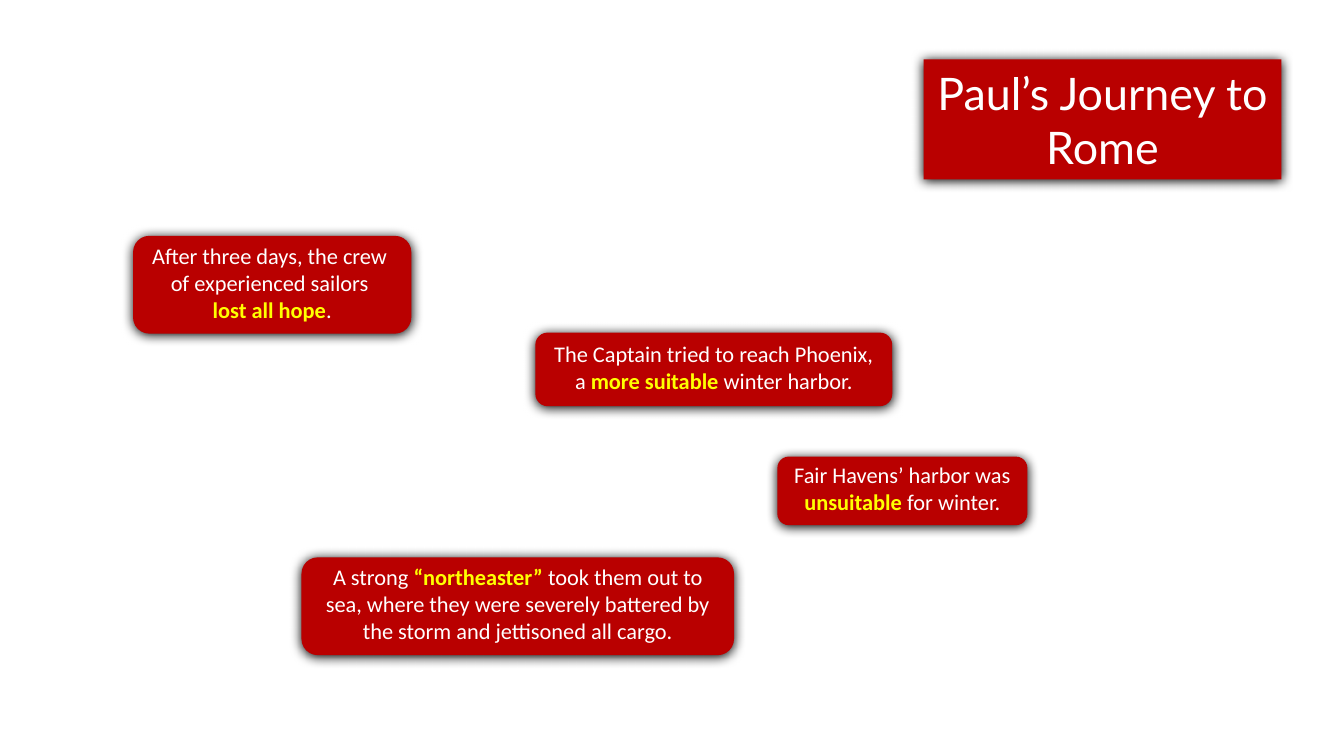
from dataclasses import dataclass

from lxml.etree import SubElement
from pptx import Presentation
from pptx.dml.color import RGBColor
from pptx.enum.shapes import MSO_SHAPE
from pptx.enum.text import MSO_ANCHOR, MSO_AUTO_SIZE, PP_ALIGN
from pptx.oxml import parse_xml
from pptx.oxml.ns import nsdecls, qn
from pptx.shapes.autoshape import Shape
from pptx.slide import Slide
from pptx.text.text import _Paragraph as Paragraph
from pptx.util import Emu, Pt

EMU_PER_PX = 9144  # 100 px to the inch
TITLE_ONLY_LAYOUT = 5


@dataclass(frozen=True)
class Theme:
    panel: RGBColor = RGBColor(0xB9, 0x00, 0x00)
    text: RGBColor = RGBColor(0xFF, 0xFF, 0xFF)
    emphasis: RGBColor = RGBColor(0xFF, 0xFF, 0x00)
    shadow: str = "000000"
    shadow_blur: Pt = Pt(8.5)
    shadow_distance: Pt = Pt(1)
    title_font: str = "Lato"
    title_size: Pt = Pt(32)
    note_font: str = "Calibri"
    note_size: Pt = Pt(16)


@dataclass(frozen=True)
class Box:
    left: int
    top: int
    width: int
    height: int


@dataclass(frozen=True)
class Note:
    """A journey note whose middle words are emphasised."""
    box: Box
    before: str
    emphasised: str
    after: str


THEME = Theme()
TITLE_BOX = Box(916, 59, 355, 119)
NOTES = (
    Note(Box(132, 234, 276, 97),
         "After three days, the crew \nof experienced sailors \n", "lost all hope", "."),
    Note(Box(531, 330, 354, 73),
         "The Captain tried to reach Phoenix, a ", "more suitable", " winter harbor."),
    Note(Box(299, 553, 429, 97), "A strong ", "“northeaster”",
         " took them out to sea, where they were severely battered by the storm"
         " and jettisoned all cargo."),
    Note(Box(771, 453, 248, 68),
         "Fair Havens’ harbor was ", "unsuitable", " for winter."),
)


def px(length: int) -> Emu:
    return Emu(length * EMU_PER_PX)


def style_panel(shape: Shape) -> None:
    """Give a shape the red fill, soft shadow and centred text of a panel."""
    shape.fill.solid()
    shape.fill.fore_color.rgb = THEME.panel
    shape.line.fill.background()
    shape.shadow.inherit = False
    effects = shape.element.spPr.find(qn("a:effectLst"))
    shadow = SubElement(effects, qn("a:outerShdw"), blurRad=str(THEME.shadow_blur),
                        dist=str(THEME.shadow_distance), dir="5400000",
                        algn="ctr", rotWithShape="0")
    SubElement(shadow, qn("a:srgbClr"), val=THEME.shadow)
    frame = shape.text_frame
    frame.word_wrap = True
    frame.auto_size = MSO_AUTO_SIZE.NONE
    frame.vertical_anchor = MSO_ANCHOR.MIDDLE
    frame.paragraphs[0].alignment = PP_ALIGN.CENTER


def add_run(paragraph: Paragraph, text: str, font: str, size: Pt,
            emphasised: bool = False) -> None:
    run = paragraph.add_run()
    run.text = text
    run.font.name = font
    run.font.size = size
    run.font.bold = emphasised
    run.font.color.rgb = THEME.emphasis if emphasised else THEME.text


def add_title(slide: Slide) -> None:
    title = slide.shapes.title
    title.left, title.top = px(TITLE_BOX.left), px(TITLE_BOX.top)
    title.width, title.height = px(TITLE_BOX.width), px(TITLE_BOX.height)
    title.element.spPr.insert(1, parse_xml(
        f'<a:prstGeom {nsdecls("a")} prst="roundRect"><a:avLst/></a:prstGeom>'))
    style_panel(title)
    add_run(title.text_frame.paragraphs[0], "Paul’s Journey to Rome",
            THEME.title_font, THEME.title_size)


def add_note(slide: Slide, note: Note) -> None:
    box = note.box
    shape = slide.shapes.add_shape(MSO_SHAPE.ROUNDED_RECTANGLE, px(box.left),
                                   px(box.top), px(box.width), px(box.height))
    style_panel(shape)
    frame = shape.text_frame
    frame.margin_top, frame.margin_bottom = px(0), px(5)
    paragraph = frame.paragraphs[0]
    for text, emphasised in ((note.before, False), (note.emphasised, True),
                             (note.after, False)):
        for index, line in enumerate(text.split("\n")):
            if index:
                paragraph.add_line_break()
            if line:
                add_run(paragraph, line, THEME.note_font, THEME.note_size, emphasised)
    for line_break in shape.element.iter(qn("a:br")):
        SubElement(line_break, qn("a:rPr"), sz=str(int(THEME.note_size.pt * 100)))


def main() -> None:
    presentation = Presentation()
    presentation.slide_width, presentation.slide_height = px(1333), px(750)
    slide = presentation.slides.add_slide(presentation.slide_layouts[TITLE_ONLY_LAYOUT])
    add_title(slide)
    for note in NOTES:
        add_note(slide, note)
    presentation.save("out.pptx")


if __name__ == "__main__":
    main()
